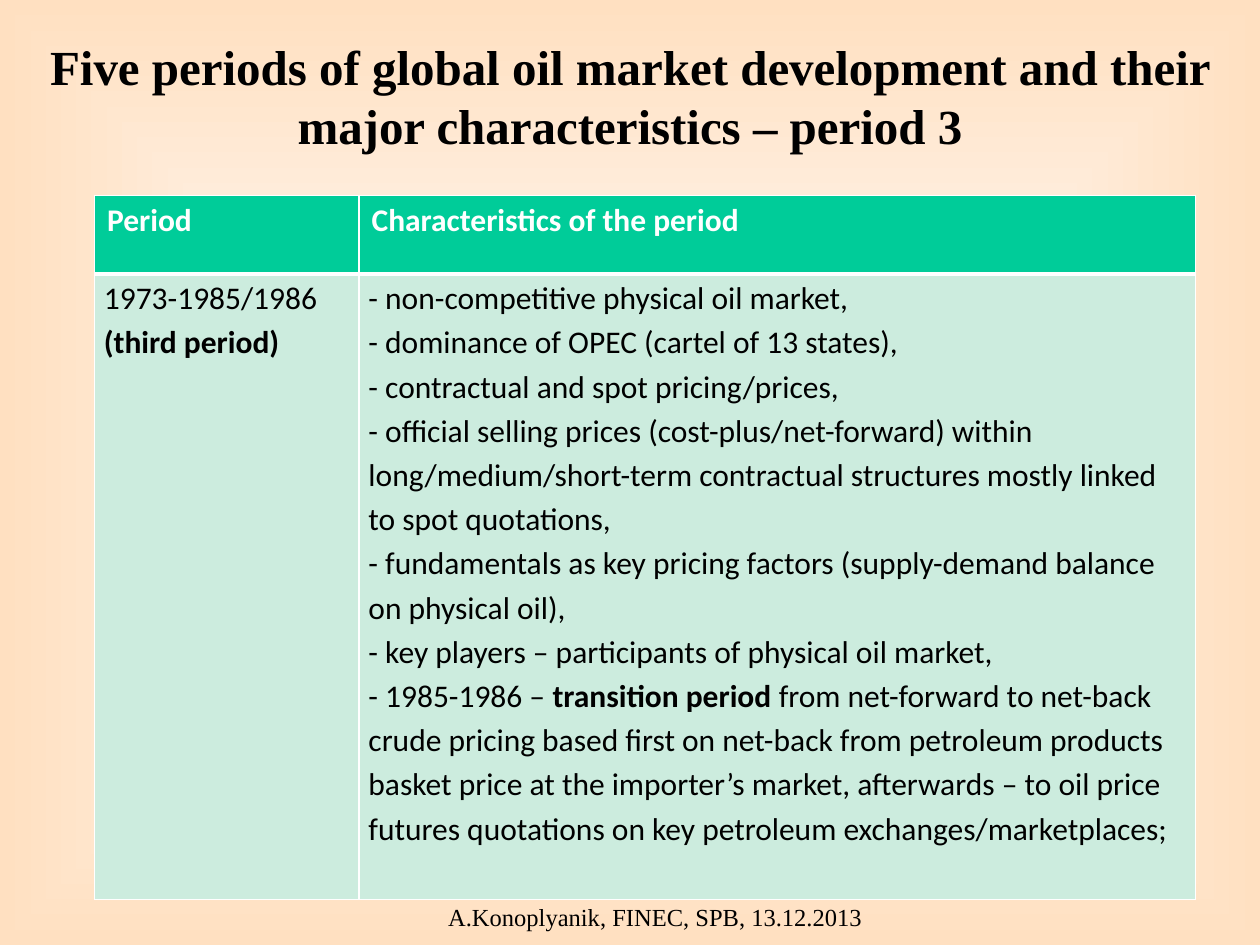
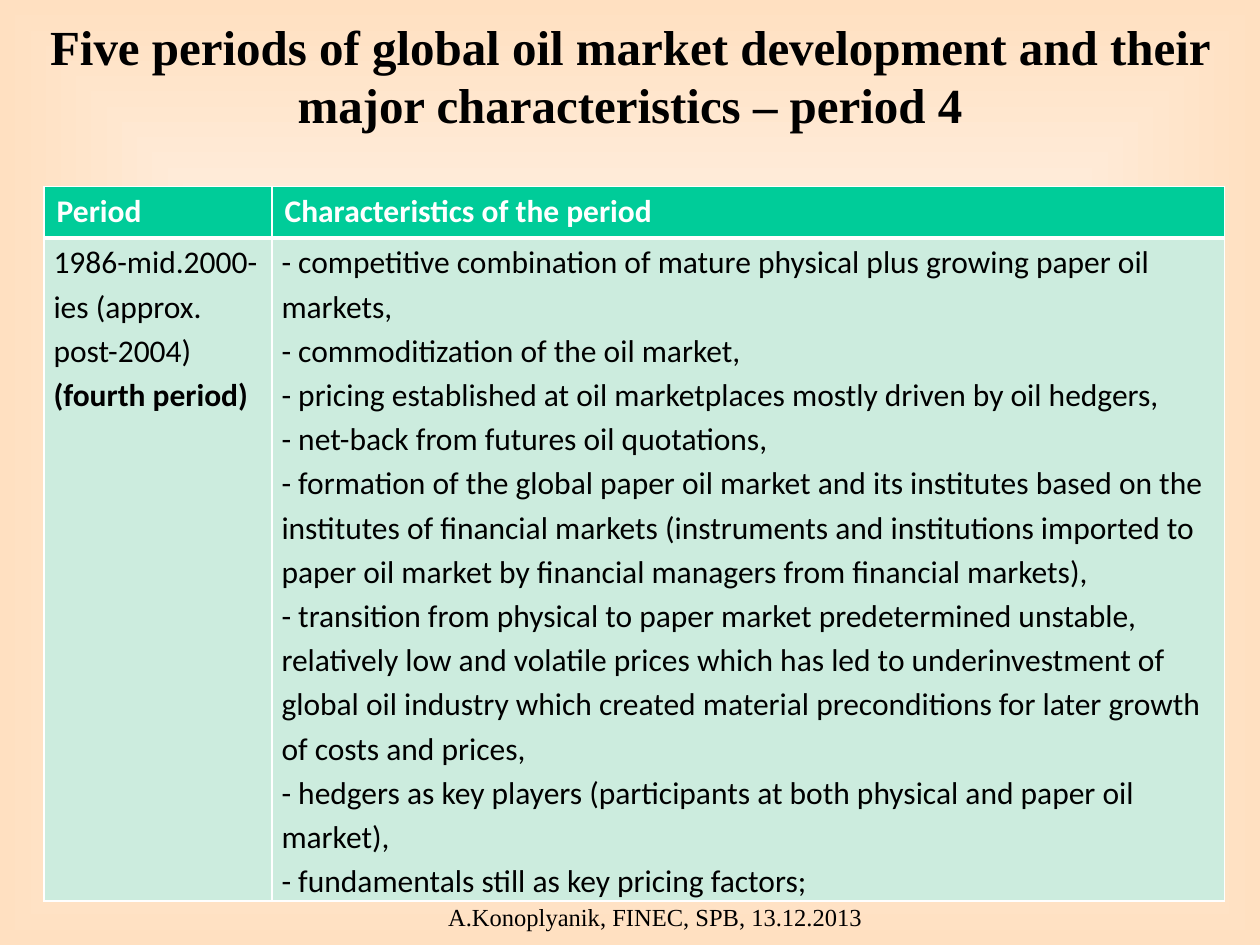
from lxml.etree import SubElement
from pptx import Presentation
from pptx.dml.color import RGBColor
from pptx.enum.text import MSO_ANCHOR, MSO_AUTO_SIZE, PP_ALIGN
from pptx.oxml import parse_xml
from pptx.oxml.ns import nsdecls, qn
from pptx.util import Pt

BLACK = RGBColor(0x00, 0x00, 0x00)
WHITE = RGBColor(0xFF, 0xFF, 0xFF)
PEACH = RGBColor(0xFF, 0xE0, 0xC1)
GREEN = RGBColor(0x00, 0xCC, 0x99)
MINT = RGBColor(0xCC, 0xEC, 0xDE)
SERIF = "Times New Roman"
SANS = "Calibri"
TITLE = "Five periods of global oil market development and their major characteristics – period "
FOOTER = "A.Konoplyanik, FINEC, SPB, 13.12.2013"
HEADS = ["Period", "Characteristics of the period"]

THIRD = [
    ["1973-1985/1986 ", "*(third period)*"],
    ["- non-competitive physical oil market, ",
     "- dominance of OPEC (cartel of 13 states), ",
     "- contractual and spot pricing/prices, ",
     "- official selling prices (cost-plus/net-forward) within long/medium/short-term "
     "contractual structures mostly linked to spot quotations, ",
     "- fundamentals as key pricing factors (supply-demand balance on physical oil), ",
     "- key players – participants of physical oil market,",
     "- 1985-1986 – *transition period *from net-forward to net-back crude pricing based "
     "first on net-back from petroleum products basket price at the importer’s market, "
     "afterwards – to oil price futures quotations on key petroleum exchanges/marketplaces;"],
]
FOURTH = [
    ["1986-mid.2000-ies (approx. post-2004) ", "*(fourth period)*"],
    ["- competitive combination of mature physical plus growing paper oil markets, ",
     "- commoditization of the oil market,",
     "- pricing established at oil marketplaces mostly driven by oil hedgers, ",
     "- net-back from futures oil quotations,",
     "- formation of the global paper oil market and its institutes based on the institutes "
     "of financial markets (instruments and institutions imported to paper oil market by "
     "financial managers from financial markets),",
     "- transition from physical to paper market predetermined unstable, relatively low and "
     "volatile prices which has led to underinvestment of global oil industry which created "
     "material preconditions for later growth of costs and prices,",
     "- hedgers as key players (participants at both physical and paper oil market),",
     "- fundamentals still as key pricing factors;"],
]


class Deck:
    def __init__(self):
        self.prs = Presentation()
        self.prs.slide_width, self.prs.slide_height = Pt(720), Pt(540)
        self.slide = None
        self.backdrop()

    def backdrop(self):
        master = self.prs.slide_master
        fill = master.background.fill
        fill.gradient()
        for stop, color in zip(fill.gradient_stops, (WHITE, PEACH)):
            stop.color.rgb = color
        grad = master.element.find(".//" + qn("a:gradFill"))
        grad.replace(grad.find(qn("a:lin")), parse_xml(
            f'<a:path {nsdecls("a")} path="shape">'
            '<a:fillToRect l="50000" t="50000" r="50000" b="50000"/></a:path>'))

    def style(self, run, font, size, color, bold=False):
        run.font.name, run.font.size = font, Pt(size)
        run.font.color.rgb, run.font.bold = color, bold

    def label(self, shape, text, size, bold=False):
        frame = shape.text_frame
        frame.text = text
        frame.word_wrap = True
        frame.auto_size = MSO_AUTO_SIZE.NONE
        para = frame.paragraphs[0]
        para.alignment = PP_ALIGN.CENTER
        self.style(para.runs[0], SERIF, size, BLACK, bold)
        return frame

    def title(self, text, top):
        self.slide = self.prs.slides.add_slide(self.prs.slide_layouts[5])
        shape = self.slide.shapes.title
        shape.left, shape.top = Pt(0), Pt(top)
        shape.width, shape.height = Pt(720), Pt(90)
        self.label(shape, text, 28, True).vertical_anchor = MSO_ANCHOR.MIDDLE

    def footer(self):
        box = self.slide.shapes.add_textbox(Pt(144.7), Pt(511.9), Pt(459.4), Pt(36))
        self.label(box, FOOTER, 14)

    def border(self, cell, top, bottom):
        props = cell._tc.get_or_add_tcPr()
        for at, (side, width) in enumerate(zip("LRTB", (1, 1, top, bottom))):
            line = props.makeelement(qn("a:ln" + side), {"w": str(Pt(width))})
            solid = SubElement(line, qn("a:solidFill"))
            SubElement(solid, qn("a:srgbClr"), val=str(WHITE))
            props.insert(at, line)

    def head(self, cell, text):
        cell.text_frame.text = text
        self.style(cell.text_frame.paragraphs[0].runs[0], SANS, 18, WHITE, True)
        cell.fill.solid()
        cell.fill.fore_color.rgb = GREEN
        self.border(cell, 1, 3)

    def body(self, cell, lines):
        cell.margin_left = cell.margin_right = Pt(5.4)
        cell.margin_top = cell.margin_bottom = Pt(0)
        para = cell.text_frame.paragraphs[0]
        para.line_spacing = 1.15
        for row, line in enumerate(lines):
            if row:
                para.add_line_break()
            for part, text in enumerate(line.split("*")):
                if text:
                    run = para.add_run()
                    run.text = text
                    self.style(run, SANS, 18, BLACK, part % 2 == 1)
        cell.fill.solid()
        cell.fill.fore_color.rgb = MINT
        self.border(cell, 3, 1)

    def table(self, left, top, widths, heights, texts):
        grid = self.slide.shapes.add_table(
            2, 2, Pt(left), Pt(top), Pt(sum(widths)), Pt(sum(heights))).table
        for row, height in zip(grid.rows, heights):
            row.height = Pt(height)
        for col, width in enumerate(widths):
            grid.columns[col].width = Pt(width)
            self.head(grid.cell(0, col), HEADS[col])
            self.body(grid.cell(1, col), texts[col])


def main():
    deck = Deck()
    deck.title(TITLE + "3", 9.4)
    deck.table(54, 111.6, (151.2, 478), (45, 357.4), THIRD)
    deck.footer()
    deck.title(TITLE + "4", -2.2)
    deck.table(25.2, 106.6, (130.3, 544.3), (29.5, 372), FOURTH)
    deck.footer()
    deck.prs.save("out.pptx")


if __name__ == "__main__":
    main()
